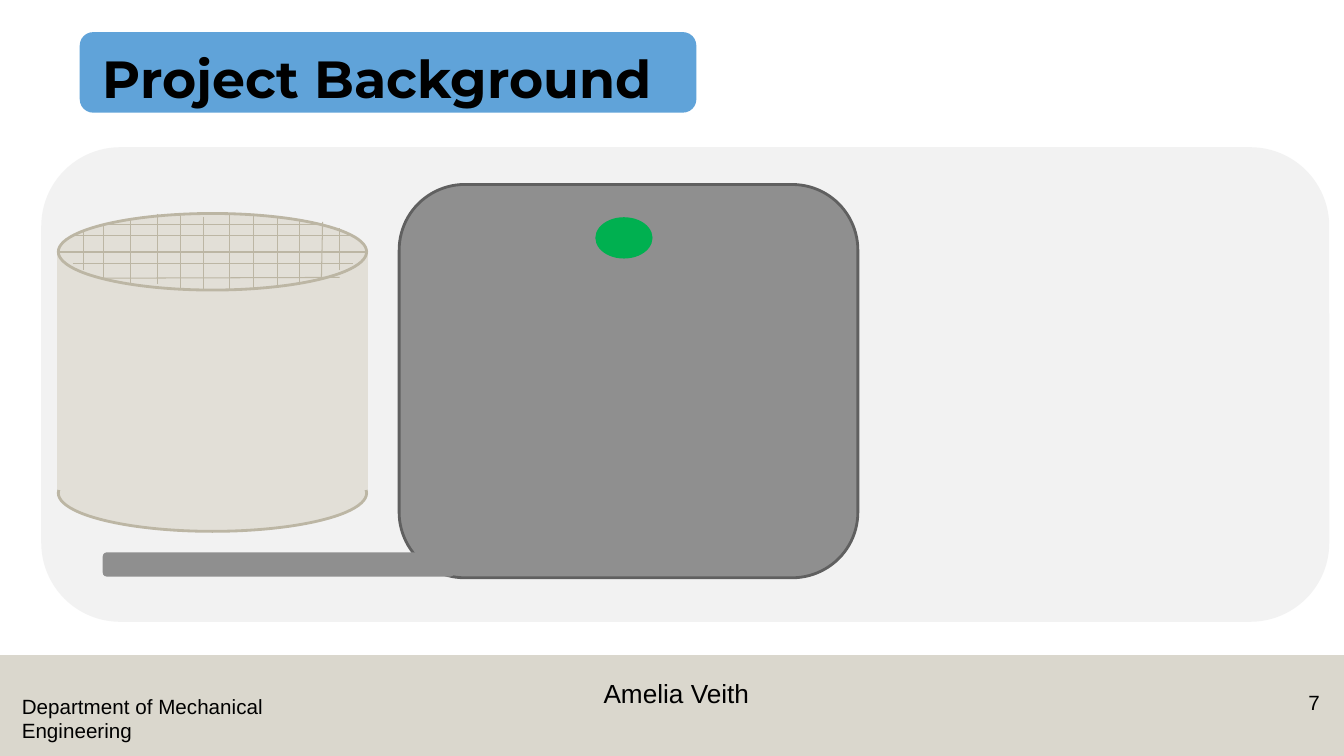
"""Build the project background slide with a mesh-topped cylinder and a grey unit."""
from dataclasses import dataclass
from typing import Any, Optional

from lxml import etree
from pptx import Presentation
from pptx import util as u
from pptx.dml.color import RGBColor
from pptx.enum import shapes, text
from pptx.oxml import ns

OVAL = shapes.MSO_SHAPE.OVAL
RECT = shapes.MSO_SHAPE.RECTANGLE
ROUNDED = shapes.MSO_SHAPE.ROUNDED_RECTANGLE
STONE, MESH, GREY, GREEN = "E2DFD7", "BCB6A4", "8F8F8F", "00B050"


@dataclass(frozen=True)
class Figure:
    kind: Any
    left: float
    top: float
    width: float
    height: float
    fill: str
    line: Optional[str] = None
    opacity: int = 100


@dataclass(frozen=True)
class Label:
    words: str
    left: float
    top: float
    width: float
    height: float
    size: float = 14.7
    font: str = "Arial"
    bold: bool = False
    align: Any = text.PP_ALIGN.LEFT
    anchor: Any = text.MSO_ANCHOR.TOP
    spacing: float = 1.0
    inset_x: float = 0.25
    inset_y: float = 0.13


@dataclass(frozen=True)
class Wire:
    x1: float
    y1: float
    x2: float
    y2: float


FOOTER = Figure(RECT, 0, 16.51, 33.87, 2.54, "B7B09C", opacity=50)
PANEL = Figure(ROUNDED, 1.04, 3.71, 32.46, 11.96, "F2F2F2")
CYLINDER = [
    Figure(OVAL, 1.47, 11.46, 7.77, 1.93, STONE, MESH),
    Figure(RECT, 1.47, 6.35, 7.77, 5.97, STONE, STONE),
    Figure(OVAL, 1.47, 5.38, 7.77, 1.93, STONE, MESH),
]
MESH_WIRES = [
    Wire(1.47, 6.35, 9.25, 6.35),
    Wire(1.83, 5.94, 8.89, 5.94),
    Wire(1.83, 6.65, 8.89, 6.65),
    Wire(2.62, 7.01, 8.56, 6.99),
    Wire(2.62, 5.66, 8.1, 5.66),
    Wire(2.11, 5.79, 2.11, 6.81),
    Wire(2.62, 5.66, 2.62, 7.01),
    Wire(3.3, 5.51, 3.3, 7.16),
    Wire(3.96, 5.38, 3.96, 7.16),
    Wire(4.55, 5.38, 4.55, 7.32),
    Wire(5.13, 5.46, 5.13, 7.32),
    Wire(5.79, 5.38, 5.79, 7.32),
    Wire(6.4, 5.38, 6.4, 7.32),
    Wire(6.99, 5.46, 6.99, 7.24),
    Wire(7.54, 5.51, 7.54, 7.16),
    Wire(8.13, 5.59, 8.1, 7.01),
    Wire(8.56, 5.74, 8.56, 6.81),
]
TITLE_PLATE = Figure(ROUNDED, 2.01, 0.81, 15.54, 2.03, "60A3D9")
UNIT = [
    Figure(ROUNDED, 10.06, 4.65, 11.56, 9.91, GREY, "606060"),
    Figure(ROUNDED, 2.59, 13.92, 8.86, 0.61, GREY),
    Figure(OVAL, 15.04, 5.51, 1.37, 0.97, GREEN, GREEN),
]
FOOTER_LABELS = [
    Label("Department of Mechanical Engineering", 0.3, 17.35, 9.12, 1.5),
    Label("7", 31.55, 17.25, 1.96, 1.02, align=text.PP_ALIGN.RIGHT),
    Label("Amelia Veith", 14.2, 16.84, 5.69, 1.8, size=18.7,
          align=text.PP_ALIGN.CENTER, spacing=0.9, inset_x=0.33, inset_y=0.33),
]
TITLE = Label("Project Background", 2.34, 0.13, 29.21, 2.77, size=37.3,
              font="Montserrat", bold=True, anchor=text.MSO_ANCHOR.BOTTOM,
              spacing=0.9)


def color(code: str) -> RGBColor:
    """Turn a hex string into a colour."""
    return RGBColor.from_string(code)


def draw_figure(canvas: Any, figure: Figure) -> None:
    """Draw one filled preset shape."""
    shape = canvas.add_shape(figure.kind, u.Cm(figure.left), u.Cm(figure.top),
                             u.Cm(figure.width), u.Cm(figure.height))
    shape.shadow.inherit = False
    shape.fill.solid()
    shape.fill.fore_color.rgb = color(figure.fill)
    if figure.opacity < 100:
        tint = shape.fill._xPr.find(".//" + ns.qn("a:srgbClr"))
        alpha = etree.SubElement(tint, ns.qn("a:alpha"))
        alpha.set("val", str(figure.opacity * 1000))
    if figure.line:
        shape.line.color.rgb = color(figure.line)
        shape.line.width = u.Pt(2)
    else:
        shape.line.fill.background()


def draw_wire(canvas: Any, wire: Wire) -> None:
    """Draw one thin mesh line."""
    line = canvas.add_connector(shapes.MSO_CONNECTOR.STRAIGHT,
                                u.Cm(wire.x1), u.Cm(wire.y1),
                                u.Cm(wire.x2), u.Cm(wire.y2))
    line.line.color.rgb = color(MESH)
    line.line.width = u.Pt(0.75)
    etree.SubElement(line._element.spPr, ns.qn("a:effectLst"))


def draw_label(canvas: Any, label: Label) -> None:
    """Draw one text box."""
    box = canvas.add_textbox(u.Cm(label.left), u.Cm(label.top),
                             u.Cm(label.width), u.Cm(label.height))
    frame = box.text_frame
    frame.word_wrap = True
    frame.vertical_anchor = label.anchor
    frame.margin_left = frame.margin_right = u.Cm(label.inset_x)
    frame.margin_top = frame.margin_bottom = u.Cm(label.inset_y)
    frame.text = label.words
    para = frame.paragraphs[0]
    para.alignment = label.align
    para.line_spacing = label.spacing
    span = para.runs[0]
    span.font.name = label.font
    span.font.size = u.Pt(label.size)
    span.font.bold = label.bold
    span.font.color.rgb = color("000000")


def main() -> None:
    """Assemble and save the slide."""
    deck = Presentation()
    deck.slide_width, deck.slide_height = u.Cm(33.87), u.Cm(19.05)
    page = deck.slides.add_slide(deck.slide_layouts[6])
    draw_figure(page.shapes, FOOTER)
    draw_figure(page.shapes, PANEL)
    cylinder = page.shapes.add_group_shape()
    for figure in CYLINDER:
        draw_figure(cylinder.shapes, figure)
    for wire in MESH_WIRES:
        draw_wire(cylinder.shapes, wire)
    draw_figure(page.shapes, TITLE_PLATE)
    for label in [TITLE, *FOOTER_LABELS]:
        draw_label(page.shapes, label)
    for figure in UNIT:
        draw_figure(page.shapes, figure)
    deck.save("out.pptx")


if __name__ == "__main__":
    main()
